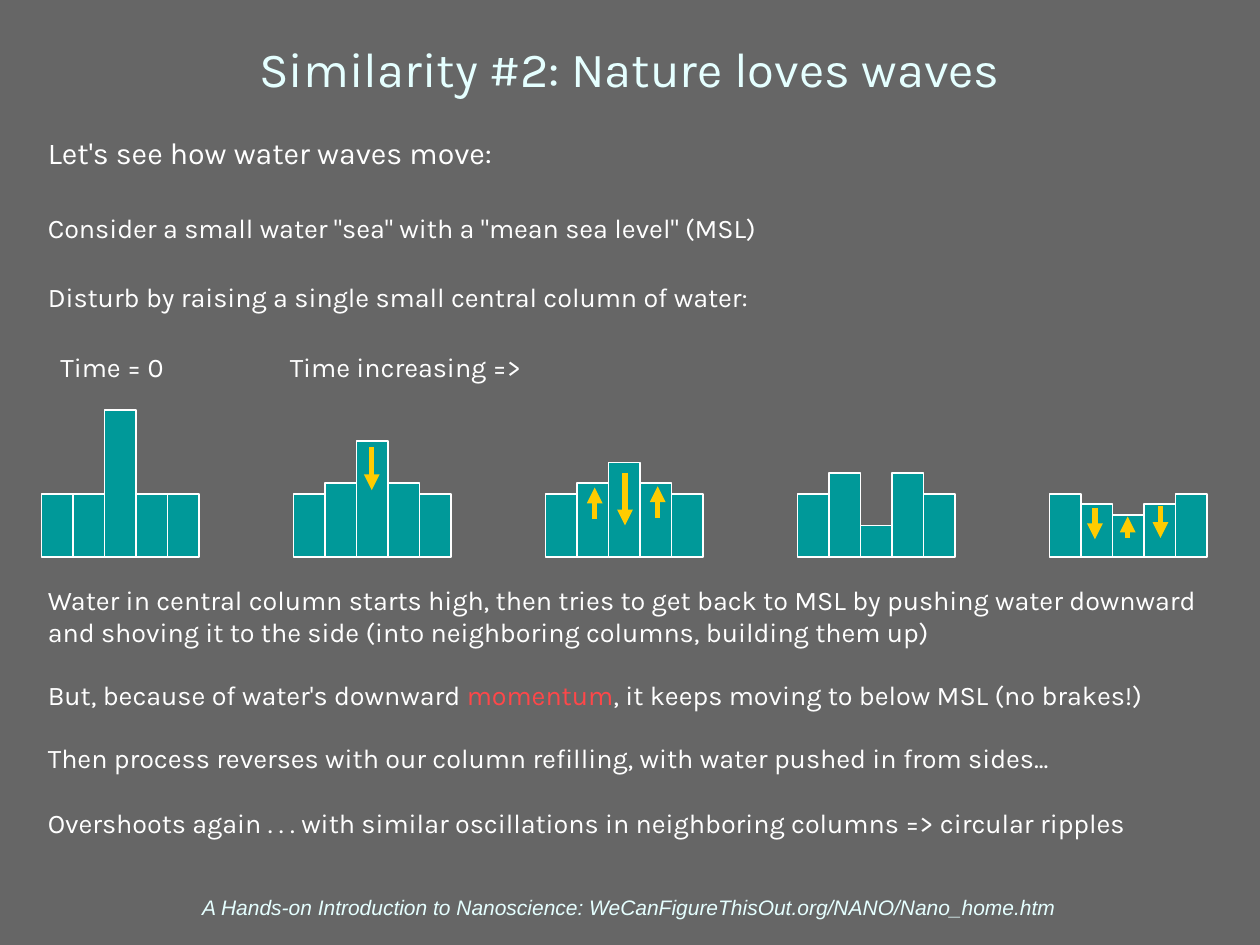
from lxml.etree import SubElement
from pptx import Presentation
from pptx.dml.color import RGBColor
from pptx.enum.shapes import MSO_CONNECTOR, MSO_SHAPE
from pptx.enum.text import MSO_ANCHOR, PP_ALIGN
from pptx.oxml.ns import qn
from pptx.util import Inches, Pt

COLORS = {
    "background": "666666",
    "heading": "E5FFFF",
    "text": "FFFFFF",
    "accent": "FF4749",
    "water": "009999",
    "arrow": "FFCC00",
}


def rgb(name):
    return RGBColor.from_string(COLORS[name])


class WaveSlide:
    """Holds the slide and its style."""

    text_font = "Karla"
    footer_font = "Arial"
    body_size = 15.4

    def __init__(self, prs):
        self.slide = prs.slides.add_slide(prs.slide_layouts[5])
        fill = self.slide.background.fill
        fill.solid()
        fill.fore_color.rgb = rgb("background")

    def frame(self, shape, anchor):
        frame = shape.text_frame
        frame.word_wrap = True
        frame.vertical_anchor = anchor
        frame.margin_left = frame.margin_right = Inches(0.05)
        frame.margin_top = frame.margin_bottom = Inches(0.05)
        return frame

    def style(self, paragraph, size, color="text", font=text_font, align=PP_ALIGN.LEFT):
        paragraph.alignment = align
        paragraph.font.name = font
        paragraph.font.size = Pt(size)
        paragraph.font.color.rgb = rgb(color)

    def title(self, text):
        shape = self.slide.shapes.title
        shape.left, shape.top = Inches(0.33), Inches(0.08)
        shape.width, shape.height = Inches(9.33), Inches(0.92)
        frame = self.frame(shape, MSO_ANCHOR.MIDDLE)
        frame.text = text
        self.style(frame.paragraphs[0], 28, "heading", align=PP_ALIGN.CENTER)

    def footer(self, text):
        box = self.slide.shapes.add_textbox(
            Inches(0.33), Inches(7.06), Inches(9.33), Inches(0.29))
        frame = self.frame(box, MSO_ANCHOR.BOTTOM)
        frame.text = text
        self.style(frame.paragraphs[0], 12, "heading", self.footer_font, PP_ALIGN.CENTER)
        frame.paragraphs[0].font.italic = True

    def text(self, left, top, width, height, lines):
        """Each line is (text, size, space before); *word* marks the accent."""
        box = self.slide.shapes.add_textbox(
            Inches(left), Inches(top), Inches(width), Inches(height))
        frame = self.frame(box, MSO_ANCHOR.TOP)
        for index, (words, size, space) in enumerate(lines):
            paragraph = frame.add_paragraph() if index else frame.paragraphs[0]
            paragraph.space_before = Pt(space)
            self.style(paragraph, size)
            for part, piece in enumerate(words.split("*")):
                run = paragraph.add_run()
                run.text = piece
                if part % 2:
                    run.font.color.rgb = rgb("accent")

    def column(self, left, base, width, height):
        column = self.slide.shapes.add_shape(
            MSO_SHAPE.RECTANGLE, Inches(left), Inches(base - height),
            Inches(width), Inches(height))
        column.shadow.inherit = False
        column.fill.solid()
        column.fill.fore_color.rgb = rgb("water")
        column.line.color.rgb = rgb("text")
        column.line.width = Pt(1)

    def arrow(self, x, start, end):
        arrow = self.slide.shapes.add_connector(
            MSO_CONNECTOR.STRAIGHT, Inches(x), Inches(start), Inches(x), Inches(end))
        arrow.line.color.rgb = rgb("arrow")
        arrow.line.width = Pt(3)
        SubElement(arrow.line._get_or_add_ln(), qn("a:tailEnd"), type="triangle")
        SubElement(arrow._element.spPr, qn("a:effectLst"))


def main():
    prs = Presentation()
    prs.slide_width, prs.slide_height = Inches(10), Inches(7.5)
    page = WaveSlide(prs)
    size = page.body_size

    page.title("Similarity #2: Nature loves waves")
    page.footer("A Hands-on Introduction to Nanoscience: "
                "WeCanFigureThisOut.org/NANO/Nano_home.htm")

    # Introduction and time labels
    page.text(0.33, 1.02, 9.33, 1.6, [
        ("Let's see how water waves move:", 17.3, 0),
        ('Consider a small water "sea" with a "mean sea level" (MSL)', size, 23),
        ("Disturb by raising a single small central column of water:", size, 21),
    ])
    page.text(0.43, 2.73, 1.5, 0.36, [("Time = 0", size, 0)])
    page.text(2.25, 2.73, 3, 0.36, [("Time increasing =>", size, 0)])

    # Water columns over time: heights in twelfths of an inch
    base, column_width, frame_pitch = 4.42, 0.25, 2
    frames = [
        (6, 6, 14, 6, 6),
        (6, 7, 11, 7, 6),
        (6, 7, 9, 7, 6),
        (6, 8, 3, 8, 6),
        (6, 5, 4, 5, 6),
    ]
    for time, heights in enumerate(frames):
        for place, height in enumerate(heights):
            left = 0.33 + time * frame_pitch + place * column_width
            page.column(left, base, column_width, height / 12)

    # Direction of flow: x, start, end
    flows = [
        (2.95, 3.55, 3.89),
        (4.72, 4.12, 3.87), (4.96, 3.75, 4.17), (5.22, 4.11, 3.86),
        (8.69, 4.03, 4.28), (8.95, 4.27, 4.1), (9.21, 4.02, 4.27),
    ]
    for flow in flows:
        page.arrow(*flow)

    # Explanation
    page.text(0.33, 4.58, 9.33, 2.3, [
        ("Water in central column starts high, then tries to get back to MSL by "
         "pushing water downward and shoving it to the side (into neighboring "
         "columns, building them up)", size, 0),
        ("But, because of water's downward *momentum*, it keeps moving to below "
         "MSL (no brakes!)", size, 17.5),
        ("Then process reverses with our column refilling, with water pushed in "
         "from sides...", size, 17.5),
        ("Overshoots again . . . with similar oscillations in neighboring columns "
         "=> circular ripples", size, 18.5),
    ])

    prs.save("out.pptx")


if __name__ == "__main__":
    main()
